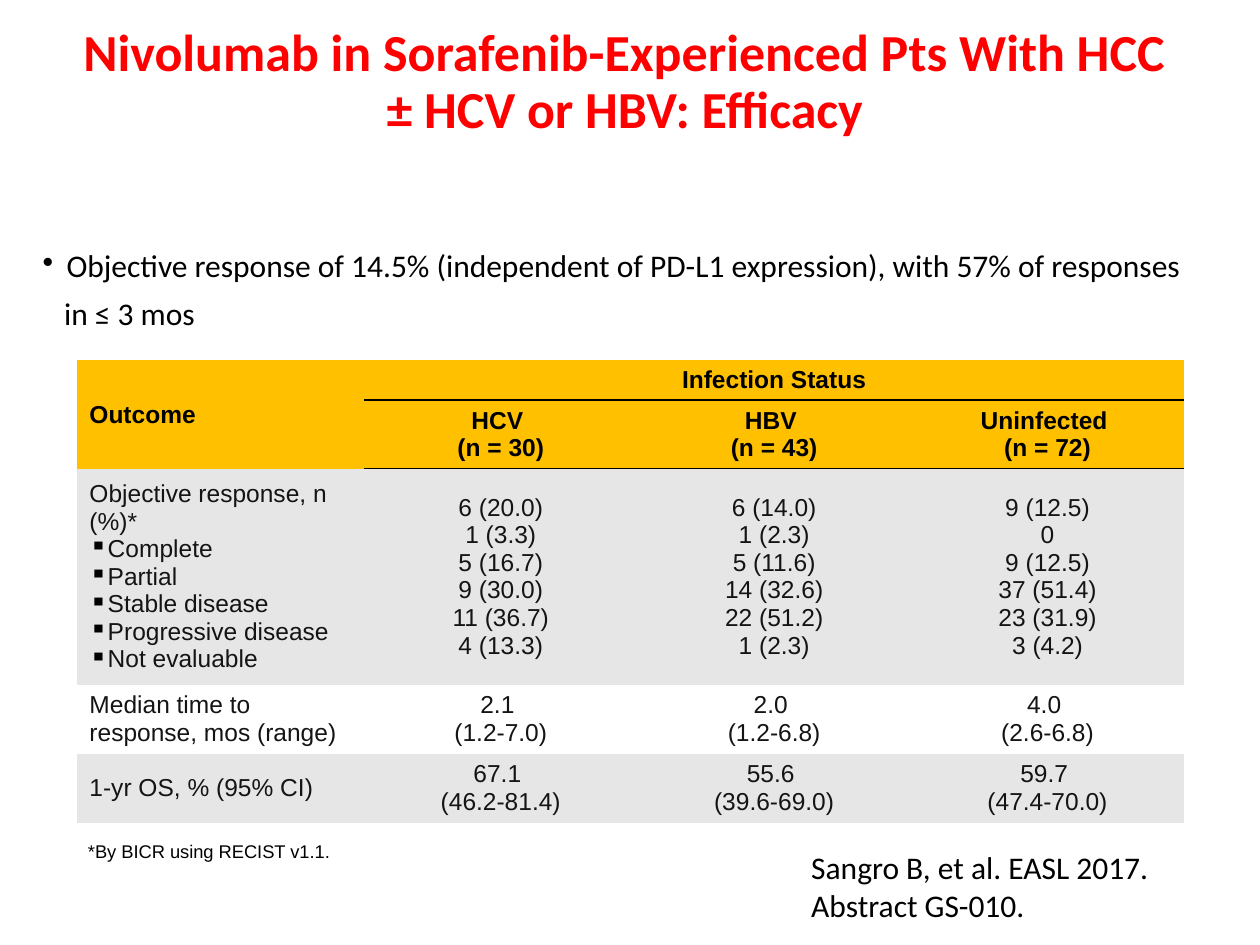
import pptx
import pptx.dml.color
import pptx.enum.text
import pptx.oxml
import pptx.oxml.ns
import pptx.util
from pptx.util import Inches

RED = pptx.dml.color.RGBColor(0xFF, 0x00, 0x00)
BLACK = pptx.dml.color.RGBColor(0x00, 0x00, 0x00)
INK = pptx.dml.color.RGBColor(0x14, 0x14, 0x15)
AMBER = pptx.dml.color.RGBColor(0xFF, 0xC0, 0x00)
GREY = pptx.dml.color.RGBColor(0xE7, 0xE6, 0xE6)
WHITE = pptx.dml.color.RGBColor(0xFF, 0xFF, 0xFF)

ALIGN = pptx.enum.text.PP_ALIGN
ANCHOR = pptx.enum.text.MSO_ANCHOR
PLAIN_TABLE_STYLE = "{2D5ABB26-0587-4C30-8999-92F81FD0307C}"

COLUMN_WIDTHS = [2.28, 2.17, 2.17, 2.17]
ROW_HEIGHTS = [0.27, 0.48, 1.27, 0.48, 0.48]
ROW_FILLS = [AMBER, AMBER, GREY, WHITE, GREY]
RESPONSES = ["Complete", "Partial", "Stable disease", "Progressive disease", "Not evaluable"]
OUTCOMES = [
    ["Outcome", "Infection Status", "", ""],
    ["", "HCV \v(n = 30)", "HBV \v(n = 43)", "Uninfected \v(n = 72)"],
    [
        "\n".join(["Objective response, n (%)*"] + RESPONSES),
        "6 (20.0)\n1 (3.3)\n5 (16.7)\n9 (30.0)\n11 (36.7)\n4 (13.3)",
        "6 (14.0)\n1 (2.3)\n5 (11.6)\n14 (32.6)\n22 (51.2)\n1 (2.3)",
        "9 (12.5)\n0\n9 (12.5)\n37 (51.4)\n23 (31.9)\n3 (4.2)",
    ],
    ["Median time to response, mos (range)",
     "2.1 \n(1.2-7.0)", "2.0 \n(1.2-6.8)", "4.0 \n(2.6-6.8)"],
    ["1-yr OS, % (95% CI)",
     "67.1 \n(46.2-81.4)", "55.6 \n(39.6-69.0)", "59.7 \n(47.4-70.0)"],
]


def set_font(paragraph, name, size, color, bold=False):
    paragraph.font.name = name
    paragraph.font.size = pptx.util.Pt(size)
    paragraph.font.color.rgb = color
    paragraph.font.bold = bold


def add_text(slide, box, text, name, size, color, bold=False, anchor=ANCHOR.TOP, wrap=True):
    frame = slide.shapes.add_textbox(*map(Inches, box)).text_frame
    frame.word_wrap = wrap
    frame.vertical_anchor = anchor
    frame.text = text
    for paragraph in frame.paragraphs:
        set_font(paragraph, name, size, color, bold)
    return frame


def add_bullet(paragraph, symbol, color=BLACK):
    properties = paragraph._p.get_or_add_pPr()
    namespace = pptx.oxml.ns.nsdecls("a")
    for position, xml in enumerate([
        f'<a:buClr {namespace}><a:srgbClr val="{color}"/></a:buClr>',
        f'<a:buChar {namespace} char="{symbol}"/>',
    ]):
        children = [child for child in properties if child.tag.endswith("defRPr")]
        element = pptx.oxml.parse_xml(xml)
        if children:
            children[0].addprevious(element)
        else:
            properties.insert(len(properties), element)


def add_rule(cell, side):
    cell._tc.get_or_add_tcPr().insert(0, pptx.oxml.parse_xml(
        f'<a:{side} {pptx.oxml.ns.nsdecls("a")} w="12700"><a:solidFill>'
        f'<a:srgbClr val="{BLACK}"/></a:solidFill></a:{side}>'))


def fill_cell(cell, text, fill, header, centred):
    cell.fill.solid()
    cell.fill.fore_color.rgb = fill
    cell.vertical_anchor = ANCHOR.MIDDLE
    cell.margin_left = cell.margin_right = Inches(0.1)
    cell.margin_top = cell.margin_bottom = Inches(0.04)
    cell.text_frame.text = text
    for paragraph in cell.text_frame.paragraphs:
        paragraph.alignment = ALIGN.CENTER if centred else ALIGN.LEFT
        if paragraph.text in RESPONSES:
            add_bullet(paragraph, "▪")
        set_font(paragraph, "Arial", 14, BLACK if header else INK, header)


def add_outcomes(slide):
    frame = slide.shapes.add_table(
        len(ROW_HEIGHTS), len(COLUMN_WIDTHS), Inches(0.61), Inches(2.86),
        Inches(sum(COLUMN_WIDTHS)), Inches(sum(ROW_HEIGHTS)))
    table = frame.table
    table.first_row = table.horz_banding = False
    table._tbl.tblPr.find(pptx.oxml.ns.qn("a:tableStyleId")).text = PLAIN_TABLE_STYLE
    for column, width in zip(table.columns, COLUMN_WIDTHS):
        column.width = Inches(width)
    for r, (height, fill, texts) in enumerate(zip(ROW_HEIGHTS, ROW_FILLS, OUTCOMES)):
        table.rows[r].height = Inches(height)
        for c, text in enumerate(texts):
            fill_cell(table.cell(r, c), text, fill, header=r < 2, centred=c > 0)
    for c in range(1, len(COLUMN_WIDTHS)):
        add_rule(table.cell(0, c), "lnB")
        add_rule(table.cell(1, c), "lnT")
    table.cell(0, 0).merge(table.cell(1, 0))
    table.cell(0, 1).merge(table.cell(0, 3))


def add_title(slide):
    title = add_text(
        slide, (0.5, 0.21, 8.92, 0.9),
        "Nivolumab in Sorafenib-Experienced Pts With HCC ± HCV or HBV: Efficacy",
        "Calibri", 29.7, RED, bold=True, anchor=ANCHOR.MIDDLE)
    title.paragraphs[0].alignment = ALIGN.CENTER
    title.paragraphs[0].line_spacing = 0.9


def add_finding(slide):
    finding = add_text(
        slide, (0.24, 1.94, 9.88, 0.8),
        "Objective response of 14.5% (independent of PD-L1 expression), "
        "with 57% of responses\nin ≤ 3 mos",
        "Calibri", 18, BLACK)
    response, timing = finding.paragraphs
    response.line_spacing = timing.line_spacing = 0.9
    timing.space_before = pptx.util.Pt(7.5)
    for paragraph, margin, indent in [(response, 0.19, -0.19), (timing, 0.17, 0)]:
        properties = paragraph._p.get_or_add_pPr()
        properties.set("marL", str(Inches(margin)))
        properties.set("indent", str(Inches(indent)))
    add_bullet(response, "•")


def main():
    presentation = pptx.Presentation()
    presentation.slide_width = Inches(10)
    presentation.slide_height = Inches(7.5)
    slide = presentation.slides.add_slide(presentation.slide_layouts[6])
    add_title(slide)
    add_finding(slide)
    add_outcomes(slide)
    add_text(slide, (0.6, 6.62, 2.16, 0.28), "*By BICR using RECIST v1.1.",
             "Arial", 10.5, BLACK, wrap=False)
    add_text(slide, (6.34, 6.67, 3.66, 0.71), "Sangro B, et al. EASL 2017. Abstract GS-010.",
             "Calibri", 18, BLACK, anchor=ANCHOR.BOTTOM)
    presentation.save("out.pptx")


if __name__ == "__main__":
    main()
